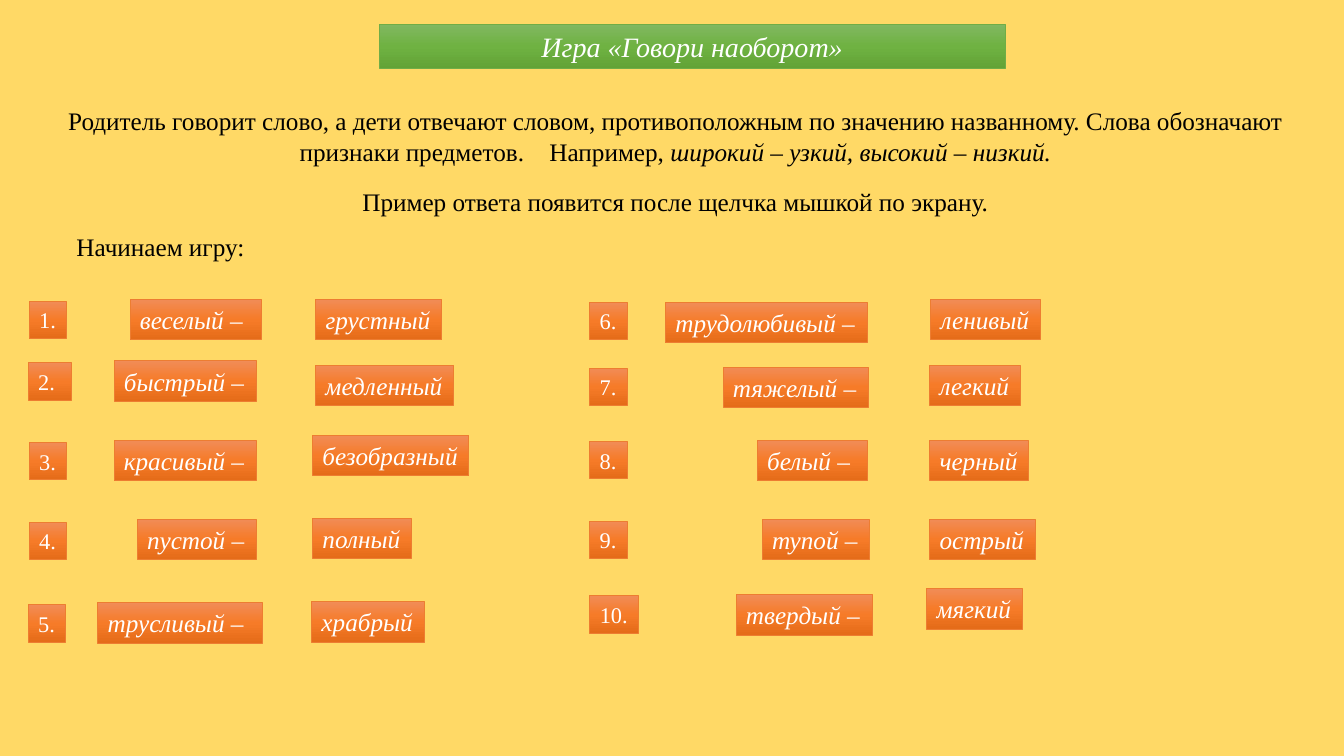
from copy import deepcopy

from pptx import Presentation
from pptx import util as u
from pptx.dml.color import RGBColor
from pptx.enum import shapes, text

FONT = "Times New Roman"
COLORS = {"background": "FFD966", "text": "000000", "light": "FFFFFF",
          "green_line": "70AD47", "orange_line": "ED7D31"}
GREEN = ("81B861", "6FB242", "62A336")
ORANGE = ("F18C57", "F67B28", "E56C19")

TITLE = "Игра «Говори наоборот»"
RULES = "Родитель говорит слово, а дети отвечают словом, противоположным по значению названному. Слова обозначают признаки предметов."
FOR_EXAMPLE = "Например, "
EXAMPLES = "широкий – узкий, высокий – низкий."
HINT = "Пример ответа появится после щелчка мышкой по экрану."
START = "Начинаем игру:"

# each entry: (left, top, width) of the number, then word and answer with theirs
PAIRS = [
    ((0.29, 2.99, 0.37), "веселый –", (1.29, 2.97, 1.3), "грустный", (3.13, 2.97, 1.25)),
    ((0.28, 3.6, 0.43), "быстрый –", (1.13, 3.58, 1.41), "медленный", (3.13, 3.62, 1.37)),
    ((0.29, 4.39, 0.37), "красивый –", (1.13, 4.37, 1.41), "безобразный", (3.1, 4.32, 1.55)),
    ((0.29, 5.18, 0.37), "пустой –", (1.36, 5.15, 1.18), "полный", (3.1, 5.14, 0.98)),
    ((0.28, 6, 0.37), "трусливый –", (0.97, 5.98, 1.63), "храбрый", (3.09, 5.97, 1.12)),
    ((5.85, 3, 0.37), "трудолюбивый –", (6.6, 3, 2), "ленивый", (9.23, 2.97, 1.09)),
    ((5.85, 3.65, 0.37), "тяжелый –", (7.17, 3.64, 1.44), "легкий", (9.22, 3.62, 0.9)),
    ((5.85, 4.38, 0.37), "белый –", (7.51, 4.37, 1.09), "черный", (9.22, 4.37, 0.98)),
    ((5.85, 5.17, 0.37), "тупой –", (7.56, 5.15, 1.06), "острый", (9.22, 5.15, 1.05)),
    ((5.85, 5.91, 0.48), "твердый –", (7.3, 5.9, 1.35), "мягкий", (9.19, 5.84, 0.95)),
]
WORD_HEIGHT, NUMBER_HEIGHT = 0.4, 0.37


def rgb(value):
    return RGBColor.from_string(value)


def add_run(p, words, size=18, color="text", italic=False):
    r = p.add_run()
    r.text = words
    r.font.name, r.font.size, r.font.italic = FONT, u.Pt(size), italic
    r.font.color.rgb = rgb(COLORS[color])
    return r


def add_text_box(s, left, top, width, height):
    sp = s.shapes.add_textbox(*map(u.Inches, (left, top, width, height)))
    sp.text_frame.word_wrap = True
    return sp.text_frame


def add_card(s, box, words, size, italic, gradient=ORANGE, line="orange_line",
             align=text.PP_ALIGN.LEFT):
    sp = s.shapes.add_shape(shapes.MSO_SHAPE.RECTANGLE, *map(u.Inches, box))
    sp.shadow.inherit = False
    sp.fill.gradient()
    sp.fill.gradient_angle = 270
    first = sp.element.find(".//{*}gs")
    first.addnext(deepcopy(first))
    for stop, value, position in zip(sp.fill.gradient_stops, gradient, (0, 0.5, 1)):
        stop.color.rgb, stop.position = rgb(value), position
    sp.line.color.rgb, sp.line.width = rgb(COLORS[line]), u.Pt(0.5)
    tf = sp.text_frame
    tf.word_wrap = True
    tf.vertical_anchor = text.MSO_ANCHOR.MIDDLE
    if align == text.PP_ALIGN.LEFT:
        tf.margin_right = 0
    p = tf.paragraphs[0]
    p.alignment = align
    add_run(p, words, size, "light", italic)


def add_intro(s):
    tf = add_text_box(s, 0.45, 1, 12.5, 1.25)
    p = tf.paragraphs[0]
    p.alignment = text.PP_ALIGN.CENTER
    add_run(p, RULES)
    gap = add_run(p, " ")
    gap.font._element.set("spc", "1350")
    add_run(p, FOR_EXAMPLE)
    add_run(p, EXAMPLES, italic=True)
    p = tf.add_paragraph()
    p.alignment = text.PP_ALIGN.CENTER
    p.space_before = u.Pt(14)
    add_run(p, HINT)
    add_run(add_text_box(s, 0.66, 2.25, 1.99, 0.4).paragraphs[0], START)


def main():
    prs = Presentation()
    prs.slide_width, prs.slide_height = u.Inches(13.33), u.Inches(7.5)
    s = prs.slides.add_slide(prs.slide_layouts[6])
    s.background.fill.solid()
    s.background.fill.fore_color.rgb = rgb(COLORS["background"])

    add_card(s, (3.76, 0.24, 6.21, 0.44), TITLE, 20, True, GREEN, "green_line",
             text.PP_ALIGN.CENTER)
    add_intro(s)
    for number, (number_at, word, word_at, answer, answer_at) in enumerate(PAIRS, 1):
        add_card(s, (*number_at, NUMBER_HEIGHT), f"{number}.", 16, False)
        add_card(s, (*word_at, WORD_HEIGHT), word, 18, True)
        add_card(s, (*answer_at, WORD_HEIGHT), answer, 18, True)
    prs.save("out.pptx")


if __name__ == "__main__":
    main()
